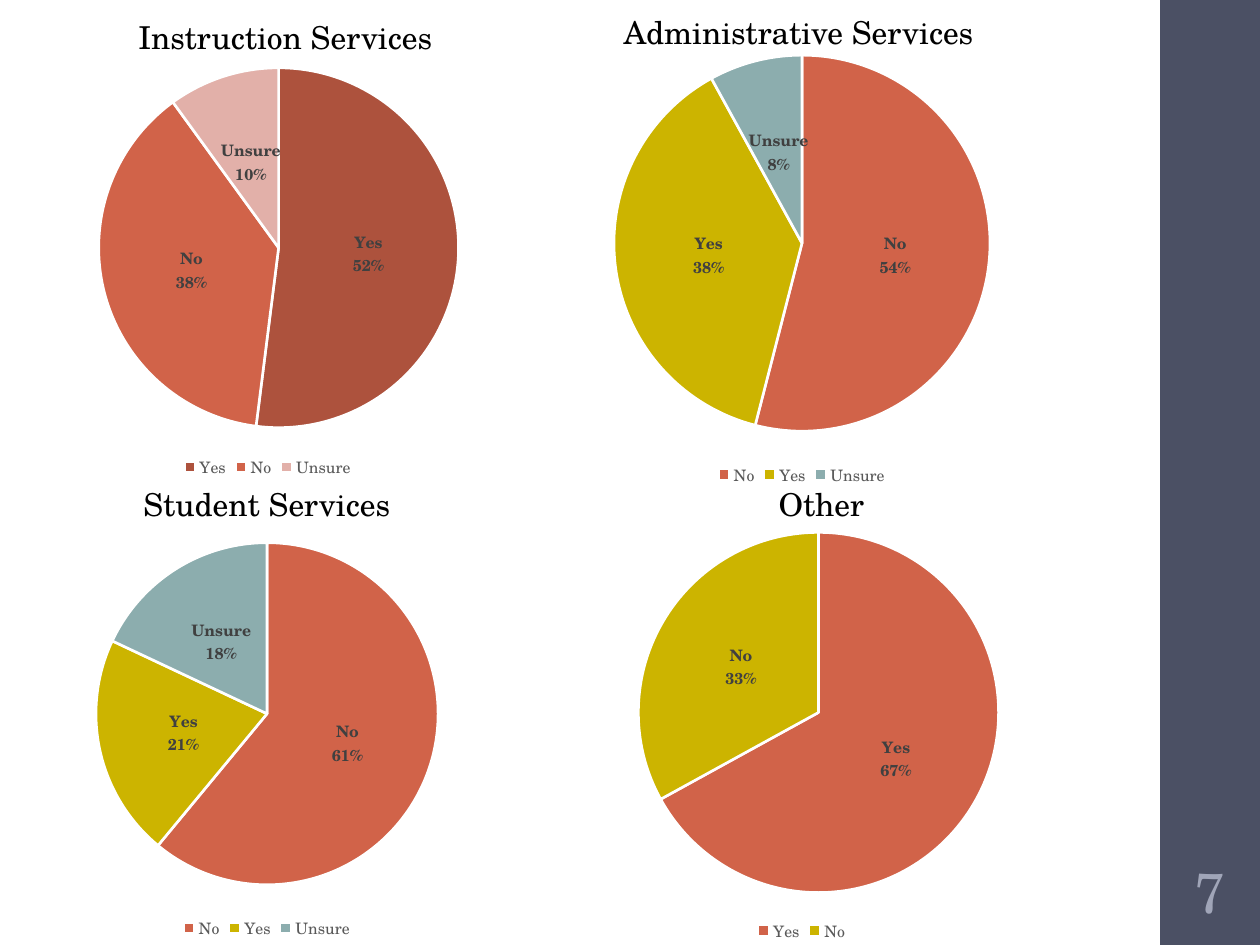
import pptx
import pptx.chart.data
import pptx.dml.color
import pptx.enum.chart
import pptx.enum.shapes
import pptx.enum.text
import pptx.oxml
import pptx.oxml.ns
import pptx.util

Pt = pptx.util.Pt
FONT = "TeX Gyre Schola"
COLORS = {
    "white": "FFFFFF", "black": "000000", "band": "4B5064", "number": "A0A5B8",
    "legend": "595959", "label": "404040", "brick": "AD523D", "coral": "D16349",
    "rose": "E2B0A9", "mustard": "CCB400", "teal": "8CADAE",
}
MIXED = ["coral", "mustard", "teal"]
REDS = ["brick", "coral", "rose"]


def rgb(name):
    return pptx.dml.color.RGBColor.from_string(COLORS[name])


def set_font(font, size, color, bold=False):
    font.name, font.size, font.bold = FONT, Pt(size), bold
    font.color.rgb = rgb(color)


def add_text(tf, text, size=18, color="black", align=None):
    p = tf.paragraphs[0]
    p.alignment = align
    r = p.add_run()
    r.text = text
    set_font(r.font, size, color)


class SlideBuilder:
    def __init__(self, s):
        self.s = s

    def band(self, x, y, w, h, color):
        sp = self.s.shapes.add_shape(
            pptx.enum.shapes.MSO_SHAPE.RECTANGLE, Pt(x), Pt(y), Pt(w), Pt(h))
        sp.shadow.inherit = False
        sp.fill.solid()
        sp.fill.fore_color.rgb = rgb(color)
        sp.line.fill.background()

    def heading(self, text, x, y, w, h=29):
        tf = self.s.shapes.add_textbox(Pt(x), Pt(y), Pt(w), Pt(h)).text_frame
        tf.word_wrap = False
        tf.auto_size = pptx.enum.text.MSO_AUTO_SIZE.SHAPE_TO_FIT_TEXT
        add_text(tf, text)

    def page_number(self, text, x, y, w, h):
        tf = self.s.shapes.add_textbox(Pt(x), Pt(y), Pt(w), Pt(h)).text_frame
        tf.word_wrap = True
        tf.margin_left = tf.margin_right = Pt(2)
        tf.vertical_anchor = pptx.enum.text.MSO_ANCHOR.MIDDLE
        add_text(tf, text, size=32, color="number",
                 align=pptx.enum.text.PP_ALIGN.CENTER)

    def pie(self, box, values, colors, plot_box=None):
        data = pptx.chart.data.CategoryChartData()
        data.categories = list(values)
        data.add_series("Series 1", list(values.values()))
        chart = self.s.shapes.add_chart(
            pptx.enum.chart.XL_CHART_TYPE.PIE, *map(Pt, box), data).chart
        chart.has_title = False
        set_font(chart.font, 10, "black")

        # Legend
        chart.has_legend = True
        chart.legend.position = pptx.enum.chart.XL_LEGEND_POSITION.BOTTOM
        chart.legend.include_in_layout = False
        set_font(chart.legend.font, 9, "legend")

        # Slices
        plot = chart.plots[0]
        plot.vary_by_categories = True
        series = plot.series[0]
        for i, color in enumerate(colors[:len(values)]):
            fmt = series.points[i].format
            fmt.fill.solid()
            fmt.fill.fore_color.rgb = rgb(color)
            fmt.line.color.rgb = rgb("white")
            fmt.line.width = Pt(1.5)

        # Labels: category above percentage
        labels = series.data_labels
        labels.show_value = False
        labels.show_category_name = labels.show_percentage = True
        labels.position = pptx.enum.chart.XL_LABEL_POSITION.CENTER
        set_font(labels.font, 9, "label", bold=True)
        qn = pptx.oxml.ns.qn
        dLbls = series._element.find(qn("c:dLbls"))
        separator = dLbls.makeelement(qn("c:separator"), {})
        separator.text = "\n"
        dLbls.find(qn("c:showBubbleSize")).addnext(separator)

        if plot_box:
            self.place_plot(chart, plot_box)

    def place_plot(self, chart, plot_box):
        qn = pptx.oxml.ns.qn
        area = chart._chartSpace.chart.plotArea
        for old in area.findall(qn("c:layout")):
            area.remove(old)
        parts = [("layoutTarget", "inner"), ("xMode", "edge"), ("yMode", "edge")]
        parts += zip("xywh", plot_box)
        inner = "".join(f'<c:{tag} val="{val}"/>' for tag, val in parts)
        area.insert(0, pptx.oxml.parse_xml(
            f'<c:layout {pptx.oxml.ns.nsdecls("c")}>'
            f'<c:manualLayout>{inner}</c:manualLayout></c:layout>'))


def main():
    prs = pptx.Presentation()
    prs.slide_width, prs.slide_height = Pt(720), Pt(540)
    # Four separate headings and no slide title, so the blank layout
    b = SlideBuilder(prs.slides.add_slide(prs.slide_layouts[6]))

    # Side band with page number
    b.band(663, 0, 57.6, 540, "band")
    b.page_number("7", 664.5, 486, 54, 46.8)

    # Pies
    b.pie((29.5, 300.2, 246.2, 239.8), {"No": 61, "Yes": 21, "Unsure": 18}, MIXED)
    b.pie((-2.9, 9.4, 311.8, 267.1), {"Yes": 52, "No": 38, "Unsure": 10}, REDS,
          plot_box=(0.17, 0.11, 0.7, 0.77))
    b.pie((323.3, 21.6, 270, 259.2), {"No": 54, "Yes": 38, "Unsure": 8}, MIXED)
    b.pie((323.3, 280.8, 270, 260.6), {"Yes": 67, "No": 33}, MIXED,
          plot_box=(0.15, 0.09, 0.77, 0.79))

    # Headings
    b.heading("Other", 437.8, 273.6, 64)
    b.heading("Instruction Services", 72, 6.5, 183.6)
    b.heading("Administrative Services", 349.2, 3.6, 216.7)
    b.heading("Student Services", 74.9, 273.6, 157)

    prs.save("out.pptx")


if __name__ == "__main__":
    main()
